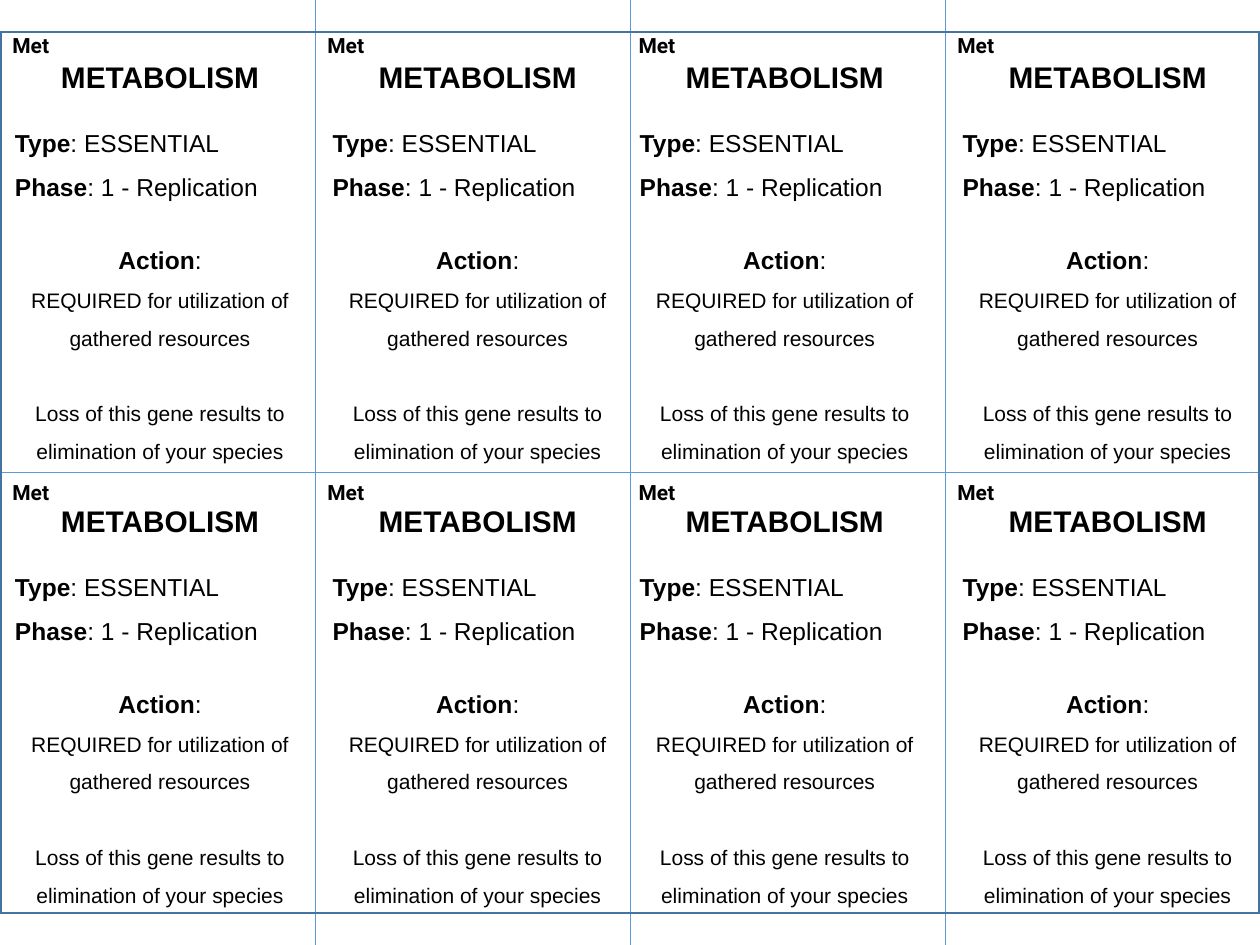
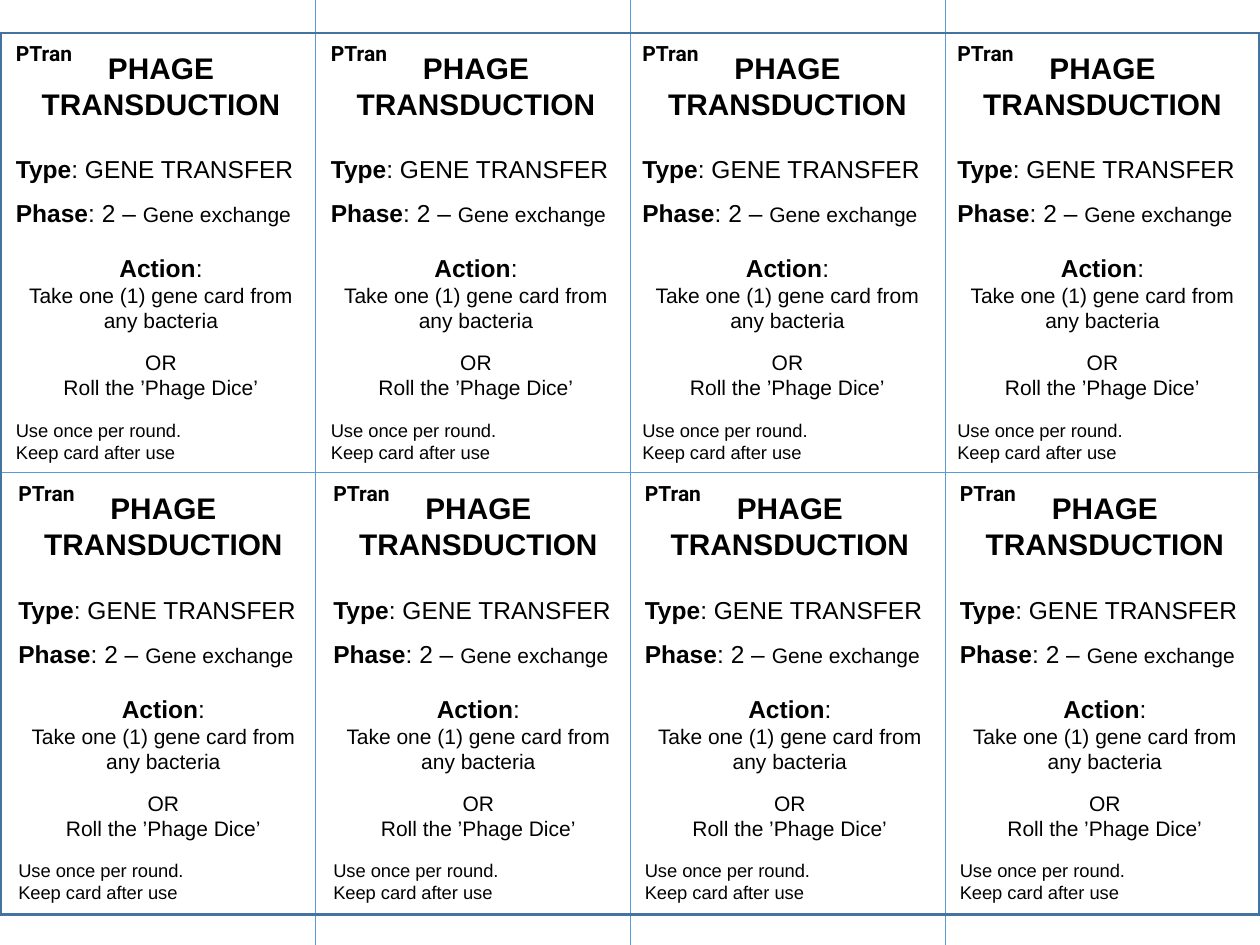
from dataclasses import dataclass

from pptx import Presentation
from pptx.dml.color import RGBColor
from pptx.enum.shapes import MSO_CONNECTOR, MSO_SHAPE
from pptx.enum.text import MSO_AUTO_SIZE as AutoSize
from pptx.enum.text import PP_ALIGN as Align
from pptx.oxml.ns import qn
from pptx.util import Pt

BLACK = RGBColor(0x00, 0x00, 0x00)
BLUE = RGBColor(0x5B, 0x9B, 0xD5)
DARK_BLUE = RGBColor(0x43, 0x73, 0x9E)
BODY_FONT = "Arial"
TAG_FONT = "Roboto"
PAGE_WIDTH, PAGE_HEIGHT = 720, 540
CARD_WIDTH = PAGE_WIDTH / 4
FRAME_HEIGHT = 504
INSET = 3.6


@dataclass
class Line:
    """One paragraph: spans of (text, size, bold), and its layout."""

    spans: list
    align: Align = Align.CENTER
    spacing: float = 1.0
    gap: float = 0


def title(text):
    """Return the heading line of a card."""
    return Line([(text, 17, True)])


def field(label, *values, gap=0):
    """Return a left-aligned line with a bold label and (text, size) values."""
    spans = [(label, 14, True)] + [(text, size, False) for text, size in values]
    return Line(spans, Align.LEFT, 1.5, gap)


def action(gap):
    """Return the line that introduces the action of a card."""
    return Line([("Action", 14, True), (":", 14, False)], gap=gap)


def sentence(text, size=12, **layout):
    """Return a line of plain text."""
    return Line([(text, size, False)], **layout)


METABOLISM = [
    title("METABOLISM"),
    field("Type", (": ESSENTIAL", 14), gap=10.7),
    field("Phase", (": 1 - Replication", 14)),
    action(gap=25),
    sentence("REQUIRED for utilization of gathered resources", spacing=1.5),
    sentence("Loss of this gene results to elimination of your species",
             spacing=1.5, gap=21.5),
]
TRANSDUCTION = [
    title("PHAGE TRANSDUCTION"),
    field("Type", (": GENE TRANSFER", 14), gap=10.7),
    field("Phase", (": 2 – ", 14), ("Gene exchange", 12)),
    action(gap=14.4),
    sentence("Take one (1) gene card from any bacteria"),
    sentence("OR", gap=9.6),
    sentence("Roll the ’Phage Dice’"),
    sentence("Use once per round.", 10.5, align=Align.LEFT, gap=10.7),
    sentence("Keep card after use", 10.5, align=Align.LEFT),
]


def add_cut_line(page, x1, y1, x2, y2):
    """Draw a thin cutting guide."""
    line = page.shapes.add_connector(
        MSO_CONNECTOR.STRAIGHT, Pt(x1), Pt(y1), Pt(x2), Pt(y2))
    line.line.color.rgb = BLUE
    line.line.width = Pt(0.5)
    properties = line._element.spPr
    properties.append(properties.makeelement(qn("a:effectLst"), {}))


def add_card_page(deck, frame_top):
    """Add a page with cutting guides and the outer frame."""
    page = deck.slides.add_slide(deck.slide_layouts[6])
    for column in range(1, 4):
        x = column * CARD_WIDTH
        add_cut_line(page, x, 0, x, PAGE_HEIGHT)
    add_cut_line(page, 0, PAGE_HEIGHT / 2, PAGE_WIDTH, PAGE_HEIGHT / 2)
    frame = page.shapes.add_shape(
        MSO_SHAPE.FRAME, 0, Pt(frame_top), Pt(PAGE_WIDTH), Pt(FRAME_HEIGHT))
    frame.adjustments[0] = 0.001
    frame.shadow.inherit = False
    frame.fill.solid()
    frame.fill.fore_color.rgb = BLUE
    frame.line.color.rgb = DARK_BLUE
    frame.line.width = Pt(1)
    return page


def add_lines(page, left, top, width, height, lines, font, wrap=True, inset=INSET):
    """Add a text box holding the given lines."""
    box = page.shapes.add_textbox(Pt(left), Pt(top), Pt(width), Pt(height))
    frame = box.text_frame
    frame.word_wrap = wrap
    frame.auto_size = AutoSize.SHAPE_TO_FIT_TEXT
    frame.margin_top = Pt(inset)
    for index, line in enumerate(lines):
        para = frame.add_paragraph() if index else frame.paragraphs[0]
        para.alignment = line.align
        para.line_spacing = line.spacing
        para.space_before = Pt(line.gap)
        for text, size, bold in line.spans:
            span = para.add_run()
            span.text = text
            span.font.name = font
            span.font.size = Pt(size)
            span.font.bold = bold
            span.font.color.rgb = BLACK


def add_tag(page, left, top, width, text):
    """Add the short gene name in the corner of a card."""
    tag = Line([(text, 12, True)], Align.LEFT)
    add_lines(page, left, top, width, 21.6, [tag], TAG_FONT, wrap=False)


def add_metabolism_page(deck):
    """Build the sheet of metabolism cards."""
    page = add_card_page(deck, 18)
    for body_top, tag_top in ((30.2, 15.1), (283.7, 270.7)):
        for body_left, tag_left in ((1.5, 0), (183, 180), (358.5, 357.8), (543, 540)):
            add_lines(page, body_left, body_top, CARD_WIDTH, 241.2,
                      METABOLISM, BODY_FONT)
            add_tag(page, tag_left, tag_top, 35.3, "Met")


def add_transduction_page(deck):
    """Build the sheet of phage transduction cards."""
    page = add_card_page(deck, 18.7)
    for top, shift in ((15.1, 0), (266.9, 1.4)):
        for column_left in (2, 182, 360, 540):
            left = column_left + shift
            add_lines(page, left, top, CARD_WIDTH, 255.6,
                      TRANSDUCTION, BODY_FONT, inset=INSET + 9.6)
            add_tag(page, left, top + 4.3, 48.2, "PTran")


def main():
    """Build and save the card sheets."""
    deck = Presentation()
    deck.slide_width, deck.slide_height = Pt(PAGE_WIDTH), Pt(PAGE_HEIGHT)
    add_metabolism_page(deck)
    add_transduction_page(deck)
    deck.save("out.pptx")


if __name__ == "__main__":
    main()
